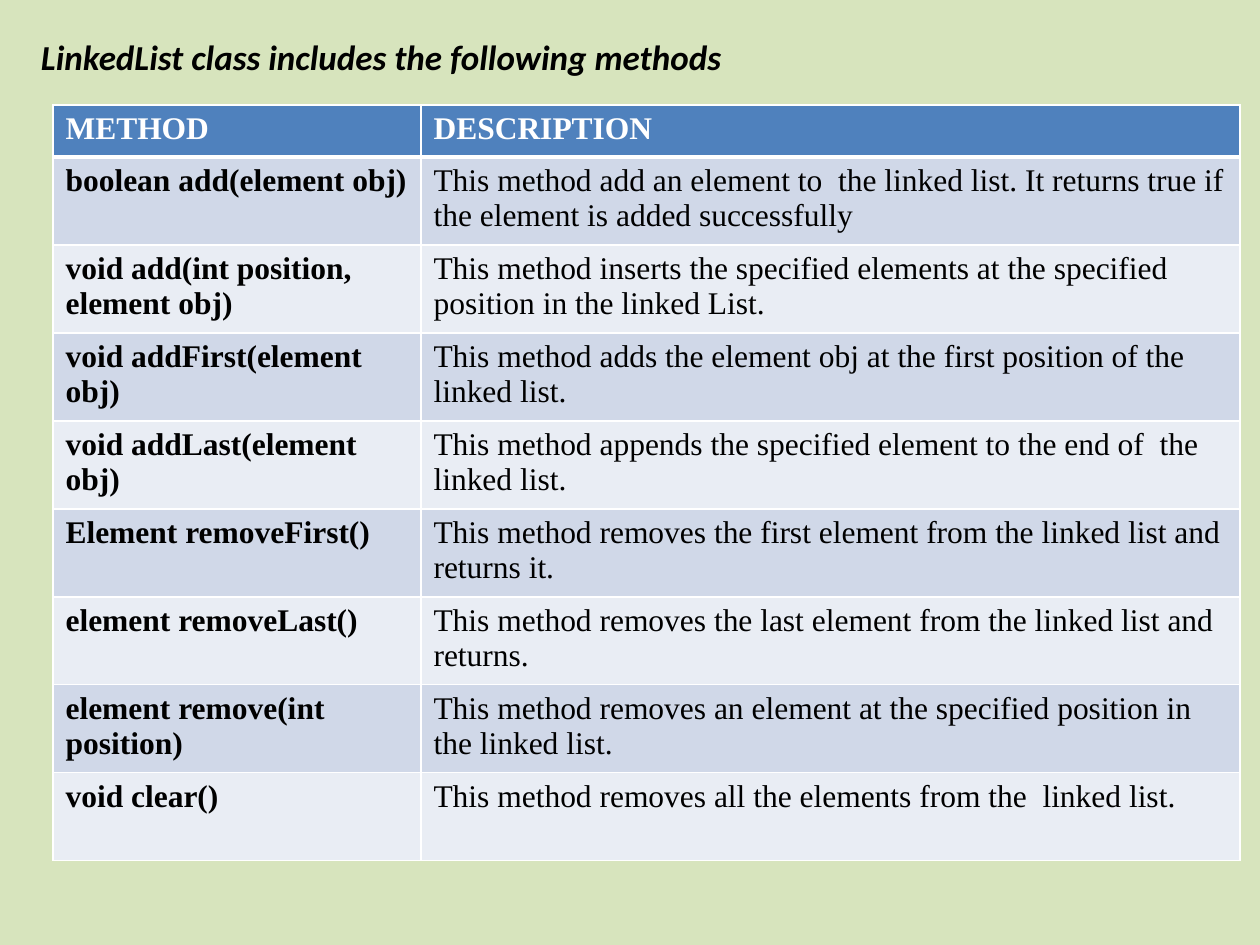
import pptx
import pptx.util
import pptx.dml.color
import pptx.enum.text
from lxml import etree

PX = 914400 // 126
NS = "http://schemas.openxmlformats.org/drawingml/2006/main"
COLORS = {"back": "D7E4BD", "head": "4F81BD", "odd": "D0D8E8",
          "even": "E9EDF4", "white": "FFFFFF", "black": "000000"}

TITLE = "LinkedList class includes the following methods"
ROWS = [
    ("METHOD", "DESCRIPTION"),
    ("boolean add(element obj)",
     "This method add an element to  the linked list. It returns true if the element is added successfully"),
    ("void add(int position, element obj)",
     "This method inserts the specified elements at the specified position in the linked List."),
    ("void addFirst(element obj)",
     "This method adds the element obj at the first position of the linked list."),
    ("void addLast(element obj)",
     "This method appends the specified element to the end of  the linked list."),
    ("Element removeFirst()",
     "This method removes the first element from the linked list and returns it."),
    ("element removeLast()",
     "This method removes the last element from the linked list and returns."),
    ("element remove(int position)",
     "This method removes an element at the specified position in the linked list."),
    ("void clear()",
     "This method removes all the elements from the  linked list."),
]
WIDTHS = (368, 819)
HEAD_H, ROW_H = 52, 88


def px(*vals):
    return [pptx.util.Emu(val * PX) for val in vals]


def color(name):
    return pptx.dml.color.RGBColor.from_string(COLORS[name])


def style(para, face, size, tint, bold, slant=False):
    font = para.font
    font.name, font.size = face, pptx.util.Pt(size)
    font.bold, font.italic = bold, slant
    font.color.rgb = color(tint)


def border(cell, side, points):
    props = cell._tc.get_or_add_tcPr()
    line = etree.SubElement(props, f"{{{NS}}}ln{side}", w=str(points * 12700))
    fill = etree.SubElement(line, f"{{{NS}}}solidFill")
    etree.SubElement(fill, f"{{{NS}}}srgbClr", val=COLORS["white"])


def add_title(slide):
    title = slide.shapes.title
    title.left, title.top, title.width, title.height = px(21, 8, 1207, 204)
    frame = title.text_frame
    frame.text = TITLE
    frame.word_wrap = True
    frame.auto_size = pptx.enum.text.MSO_AUTO_SIZE.NONE
    frame.vertical_anchor = pptx.enum.text.MSO_ANCHOR.TOP
    frame.margin_left = px(20)[0]
    para = frame.paragraphs[0]
    para.alignment = pptx.enum.text.PP_ALIGN.LEFT
    para.line_spacing = 1.5
    style(para, "Calibri", 20, "black", True, True)


def add_methods(slide):
    heights = [HEAD_H] + [ROW_H] * (len(ROWS) - 1)
    table = slide.shapes.add_table(
        len(ROWS), len(WIDTHS), *px(53, 105, sum(WIDTHS), sum(heights))).table
    for col, width in zip(table.columns, px(*WIDTHS)):
        col.width = width
    for r, (texts, height) in enumerate(zip(ROWS, px(*heights))):
        table.rows[r].height = height
        head = r == 0
        band = "head" if head else "odd" if r % 2 else "even"
        for c, text in enumerate(texts):
            cell = table.cell(r, c)
            cell.text = text
            for side in "LRTB":
                thick = (side == "B" and r == 0) or (side == "T" and r == 1)
                border(cell, side, 3 if thick else 1)
            cell.fill.solid()
            cell.fill.fore_color.rgb = color(band)
            style(cell.text_frame.paragraphs[0], "Times New Roman", 18,
                  "white" if head else "black", head or c == 0)


def main():
    deck = pptx.Presentation()
    deck.slide_width, deck.slide_height = px(1260, 945)
    slide = deck.slides.add_slide(deck.slide_layouts[5])
    back = slide.background.fill
    back.solid()
    back.fore_color.rgb = color("back")
    add_title(slide)
    add_methods(slide)
    deck.save("out.pptx")


if __name__ == "__main__":
    main()
